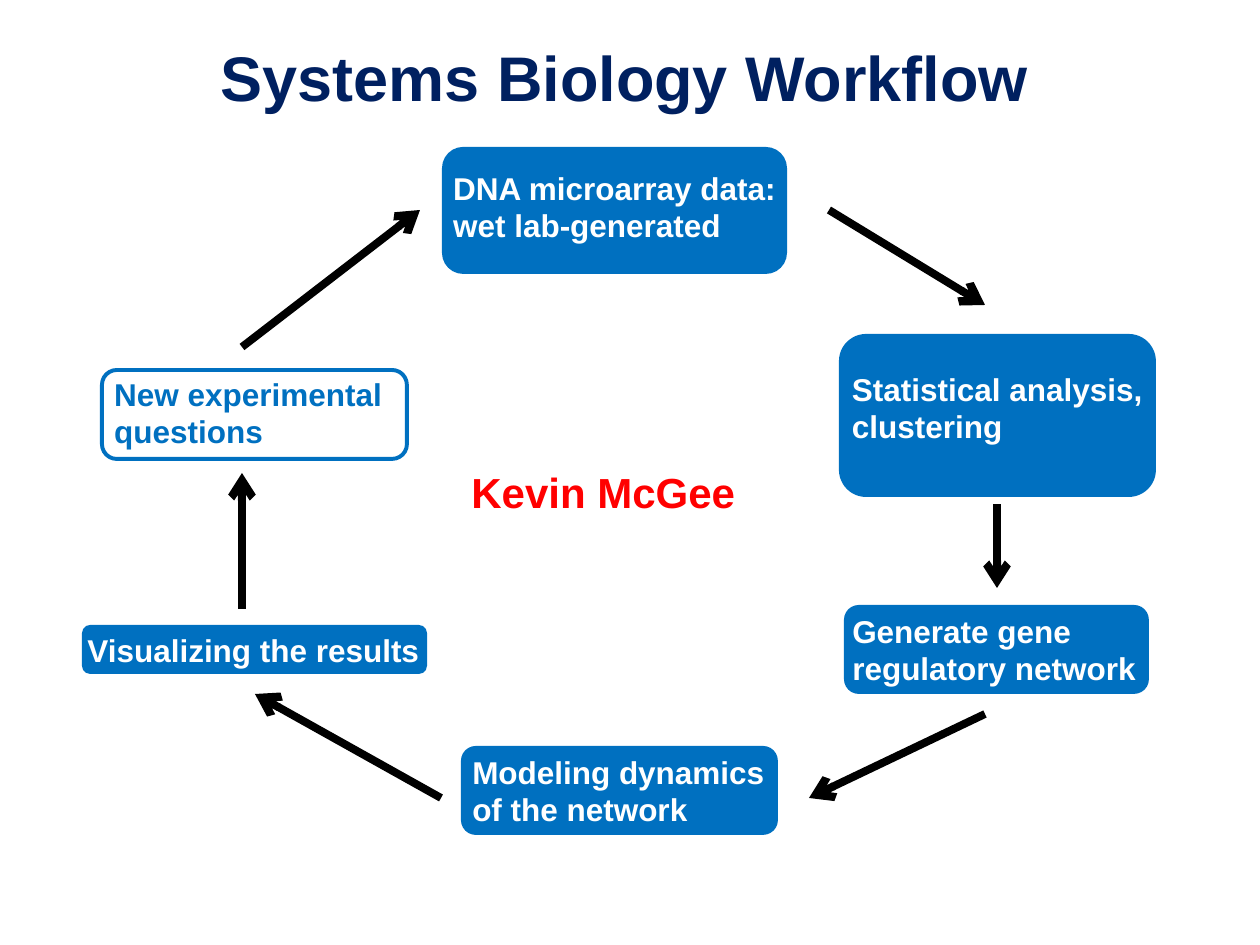
from dataclasses import dataclass

from lxml.etree import SubElement
from pptx import Presentation
from pptx.dml.color import RGBColor
from pptx.enum.shapes import MSO_CONNECTOR, MSO_SHAPE
from pptx.enum.text import MSO_ANCHOR, PP_ALIGN
from pptx.oxml.ns import qn
from pptx.util import Emu, Pt

EMU_PER_PX = 914400 / 126


@dataclass(frozen=True)
class Theme:
    """Colours, font and sizes of the slide."""

    font: str = "Arial"
    navy: RGBColor = RGBColor(0x00, 0x20, 0x60)
    blue: RGBColor = RGBColor(0x00, 0x70, 0xC0)
    red: RGBColor = RGBColor(0xFF, 0x00, 0x00)
    white: RGBColor = RGBColor(0xFF, 0xFF, 0xFF)
    black: RGBColor = RGBColor(0x00, 0x00, 0x00)
    title_size: int = 36
    name_size: int = 24
    step_size: int = 18
    outline_width: float = 2.25
    arrow_width: float = 4.5


THEME = Theme()

STEPS = [
    (["DNA microarray data:", "wet lab-generated"], (442, 147, 345, 127), 5, 8, True),
    (["Statistical analysis,", "clustering"], (839, 334, 317, 163), 5, 16, True),
    (["Generate gene regulatory network"], (844, 605, 305, 89), 4, 0, True),
    (["Modeling dynamics of the network"], (461, 746, 317, 89), 7, 0, True),
    (["Visualizing the results"], (82, 625, 345, 49), 3, 0, True),
    (["New experimental questions"], (102, 370, 305, 89), 8, 4, False),
]

ARROWS = [
    ((829, 210), (985, 305)),
    ((997, 504), (997, 588)),
    ((985, 714), (809, 798)),
    ((441, 798), (255, 694)),
    ((242, 609), (242, 473)),
    ((242, 347), (420, 210)),
]


def px(length):
    """Turn a length in pixels into EMU."""
    return Emu(round(length * EMU_PER_PX))


def write_lines(frame, lines, size, colour, alignment=PP_ALIGN.LEFT):
    """Write each line as one bold paragraph."""
    for index, line in enumerate(lines):
        paragraph = frame.add_paragraph() if index else frame.paragraphs[0]
        paragraph.alignment = alignment
        run = paragraph.add_run()
        run.text = line
        run.font.name = THEME.font
        run.font.size = Pt(size)
        run.font.bold = True
        run.font.color.rgb = colour


def set_title(slide, text):
    """Place and format the title placeholder."""
    title = slide.shapes.title
    title.left, title.top, title.width, title.height = map(px, (136, 32, 977, 89))
    title.text_frame.vertical_anchor = MSO_ANCHOR.MIDDLE
    write_lines(title.text_frame, [text], THEME.title_size, THEME.navy, PP_ALIGN.CENTER)


def add_step(slide, lines, box, left_inset, bottom_inset, filled):
    """Add a rounded workflow step holding its text."""
    shape = slide.shapes.add_shape(MSO_SHAPE.ROUNDED_RECTANGLE, *map(px, box))
    shape.shadow.inherit = False
    if filled:
        shape.fill.solid()
        shape.fill.fore_color.rgb = THEME.blue
        shape.line.fill.background()
    else:
        shape.fill.background()
        shape.line.color.rgb = THEME.blue
        shape.line.width = Pt(THEME.outline_width)
    frame = shape.text_frame
    frame.word_wrap = True
    frame.vertical_anchor = MSO_ANCHOR.MIDDLE
    frame.margin_left, frame.margin_bottom = px(left_inset), px(bottom_inset)
    frame.margin_top = frame.margin_right = 0
    write_lines(frame, lines, THEME.step_size, THEME.white if filled else THEME.blue)


def add_arrow(slide, start, end):
    """Add a straight arrow pointing at its end."""
    connector = slide.shapes.add_connector(
        MSO_CONNECTOR.STRAIGHT, *map(px, start + end)
    )
    connector.line.color.rgb = THEME.black
    connector.line.width = Pt(THEME.arrow_width)
    SubElement(connector.line._get_or_add_ln(), qn("a:tailEnd"), type="arrow")
    SubElement(connector._element.spPr, qn("a:effectLst"))


def add_name(slide, name):
    """Add the name in the middle of the cycle."""
    box = slide.shapes.add_textbox(*map(px, (459, 460, 292, 63)))
    box.text_frame.word_wrap = False
    write_lines(box.text_frame, [name], THEME.name_size, THEME.red)


def main():
    """Build and save the slide."""
    presentation = Presentation()
    presentation.slide_width, presentation.slide_height = px(1260), px(945)
    slide = presentation.slides.add_slide(presentation.slide_layouts[5])
    set_title(slide, "Systems Biology Workflow")
    for step in STEPS:
        add_step(slide, *step)
    for start, end in ARROWS:
        add_arrow(slide, start, end)
    add_name(slide, "Kevin McGee")
    presentation.save("out.pptx")


if __name__ == "__main__":
    main()
